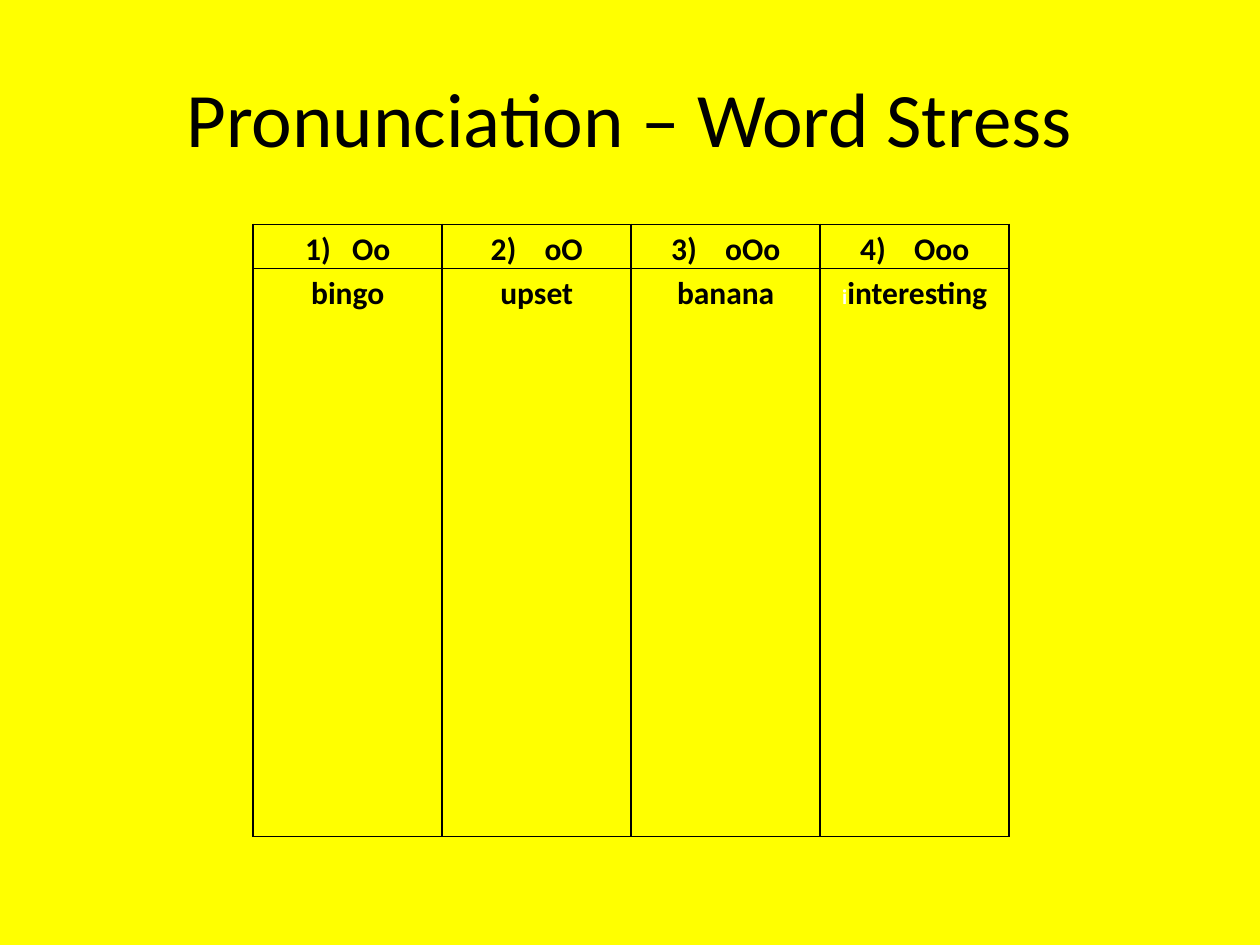
from lxml import etree
from pptx import Presentation
from pptx import util as u
from pptx.dml.color import RGBColor
from pptx.enum import text
from pptx.oxml import ns

BLACK, WHITE, YELLOW = "000000", "FFFFFF", "FFFF00"


def rgb(value):
    return RGBColor.from_string(value)


def add_run(p, words, color=BLACK, **fmt):
    r = p.add_run()
    r.text = words
    for name, value in {"name": "Calibri", "size": u.Pt(18), "bold": True, **fmt}.items():
        setattr(r.font, name, value)
    r.font.color.rgb = rgb(color)
    return r


prs = Presentation()
prs.slide_width, prs.slide_height = u.Inches(10), u.Inches(7.5)
s = prs.slides.add_slide(prs.slide_layouts[6])
s.background.fill.solid()
s.background.fill.fore_color.rgb = rgb(YELLOW)

sp = s.shapes.add_textbox(u.Inches(0.5), u.Inches(0.3), u.Inches(9), u.Inches(1.25))
tf = sp.text_frame
tf.word_wrap = True
tf.vertical_anchor = text.MSO_ANCHOR.MIDDLE
p = tf.paragraphs[0]
p.alignment = text.PP_ALIGN.CENTER
add_run(p, "Pronunciation – Word Stress", size=u.Pt(44), bold=False)

# number, stress pattern, gap between them in points, example word
columns = [
    ("1)", "Oo", 8, "bingo"),
    ("2)", "oO", 12, "upset"),
    ("3)", "oOo", 12, "banana"),
    ("4)", "Ooo", 12, "interesting"),
]
tbl = s.shapes.add_table(2, len(columns), u.Inches(2.01), u.Inches(1.78),
                         u.Inches(6), u.Inches(4.86)).table
tbl.first_row = tbl.horz_banding = False
for row, height in zip(tbl.rows, (0.35, 4.51)):
    row.height = u.Inches(height)

cell_format = {
    "margin_left": u.Inches(0.07), "margin_right": u.Inches(0.07),
    "margin_top": 0, "margin_bottom": 0,
}
for col, (number, pattern, gap, word) in enumerate(columns):
    tbl.columns[col].width = u.Inches(1.5)
    for row in range(2):
        cell = tbl.cell(row, col)
        for name, value in cell_format.items():
            setattr(cell, name, value)
        tc_pr = cell._tc.get_or_add_tcPr()
        for side in ("lnL", "lnR", "lnT", "lnB"):
            ln = etree.SubElement(tc_pr, ns.qn(f"a:{side}"), w=str(u.Pt(1)))
            fill = etree.SubElement(ln, ns.qn("a:solidFill"))
            etree.SubElement(fill, ns.qn("a:srgbClr"), val=BLACK)
        cell.fill.background()
        p = cell.text_frame.paragraphs[0]
        p.alignment = text.PP_ALIGN.CENTER
        p.line_spacing = 1.15
        if row == 0:
            add_run(p, number)
            space = add_run(p, " ")
            space.font._element.set("spc", str(gap * 100))
            add_run(p, pattern)
        else:
            if word == "interesting":
                add_run(p, "i", WHITE, size=u.Pt(12))
            add_run(p, word)

prs.save("out.pptx")
